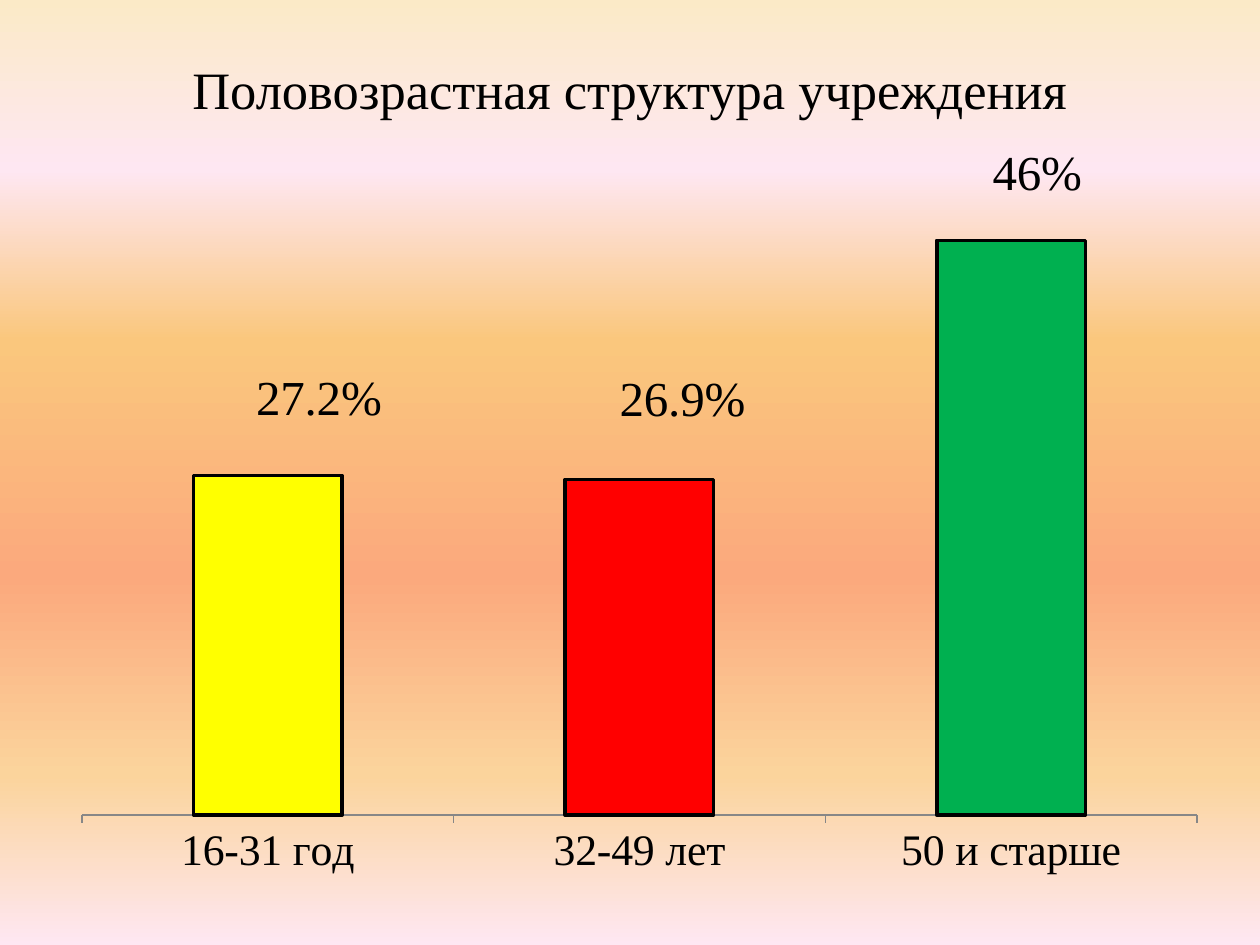
import pptx
import pptx.chart.data
import pptx.dml.color
import pptx.enum.chart
import pptx.enum.text
import pptx.oxml
import pptx.oxml.ns
import pptx.util

RGB = pptx.dml.color.RGBColor
PX = 914400 // 126
BLACK = RGB(0x00, 0x00, 0x00)
GREY = RGB(0x87, 0x87, 0x87)
YELLOW = RGB(0xFF, 0xFF, 0x00)
RED = RGB(0xFF, 0x00, 0x00)
GREEN = RGB(0x00, 0xB0, 0x50)
STOPS = [
    (0, RGB(0xFB, 0xEA, 0xC7)),
    (18, RGB(0xFE, 0xE7, 0xF2)),
    (36, RGB(0xFA, 0xC7, 0x7D)),
    (61, RGB(0xFB, 0xA9, 0x7D)),
    (82, RGB(0xFB, 0xD4, 0x9C)),
    (100, RGB(0xFE, 0xE7, 0xF2)),
]
FONT = "Times New Roman"
AGE_GROUPS = [
    ("16-31 год", 88, "27.2%", YELLOW, (51, -45)),
    ("32-49 лет", 87, "26.9%", RED, (43, -48)),
    ("50 и старше", 149, "46%", GREEN, (26, -35)),
]
NO_LEADERS = (
    '<c:extLst><c:ext uri="{CE6537A1-D6FC-4f65-9D91-7224C49458BB}"'
    ' xmlns:c15="http://schemas.microsoft.com/office/drawing/2012/chart">'
    '<c15:showLeaderLines val="0"/></c:ext></c:extLst>')


def set_attrs(obj, values):
    """Set each named attribute of obj."""
    for name, value in values.items():
        setattr(obj, name, value)


def set_font(font, size):
    """Apply the slide's typeface in black at the given point size."""
    set_attrs(font, {"name": FONT, "size": pptx.util.Pt(size), "bold": False})
    font.color.rgb = BLACK


def chart_xml(text):
    """Parse a chart element that uses the c prefix."""
    return pptx.oxml.parse_xml(text.replace(">", f" {pptx.oxml.ns.nsdecls('c')}>", 1))


def layout_xml(fractions, inner=False):
    """Return a manual layout element holding the given fractions."""
    modes = "".join(
        f'<c:{m} val="{v}"/>'
        for m, v in [("layoutTarget", "inner"), ("xMode", "edge"), ("yMode", "edge")]
        if inner
    )
    parts = "".join(f'<c:{k} val="{v:.4f}"/>' for k, v in fractions.items())
    return chart_xml(f"<c:layout><c:manualLayout>{modes}{parts}</c:manualLayout></c:layout>")


def paint_background(s):
    """Fill the slide with the vertical colour gradient."""
    fill = s.background.fill
    fill.gradient()
    fill.gradient_angle = 270
    gs_lst = s.element.find(".//" + pptx.oxml.ns.qn("a:gsLst"))
    for gs in list(gs_lst):
        gs_lst.remove(gs)
    for pos, color in STOPS:
        gs_lst.append(pptx.oxml.parse_xml(
            f'<a:gs {pptx.oxml.ns.nsdecls("a")} pos="{pos * 1000}">'
            f'<a:srgbClr val="{color}"/></a:gs>'))


def add_title(s, box):
    """Place the centred heading in the box."""
    tf = s.shapes.add_textbox(*(v * PX for v in box)).text_frame
    set_attrs(tf, {"word_wrap": True, "vertical_anchor": pptx.enum.text.MSO_ANCHOR.MIDDLE})
    p = tf.paragraphs[0]
    p.alignment = pptx.enum.text.PP_ALIGN.CENTER
    r = p.add_run()
    r.text = "Половозрастная структура учреждения"
    set_font(r.font, 30)


def style_axes(chart):
    """Show only the category axis and fix the value scale."""
    set_attrs(chart.value_axis, {
        "visible": False, "has_major_gridlines": False,
        "minimum_scale": 0, "maximum_scale": 160})
    axis = chart.category_axis
    axis.major_tick_mark = pptx.enum.chart.XL_TICK_MARK.OUTSIDE
    axis.format.line.color.rgb = GREY
    set_font(axis.tick_labels.font, 25)


def style_bar(fmt, color):
    """Fill a bar and give it the black outline."""
    fmt.fill.solid()
    fmt.fill.fore_color.rgb = color
    fmt.line.width = pptx.util.Pt(2)
    fmt.line.color.rgb = BLACK


def label_point(point, text):
    """Write the percentage above one bar."""
    label = point.data_label
    r = label.text_frame.paragraphs[0].add_run()
    r.text = text
    set_font(r.font, 28)
    label.position = pptx.enum.chart.XL_LABEL_POSITION.OUTSIDE_END


def style_series(series, width, height):
    """Colour the bars and place their labels without leader lines."""
    qn = pptx.oxml.ns.qn
    style_bar(series.format, AGE_GROUPS[0][3])
    for i, (_, _, text, color, _) in enumerate(AGE_GROUPS):
        if i:
            style_bar(series.points[i].format, color)
        label_point(series.points[i], text)
    labels = series.data_labels
    set_attrs(labels, {
        "show_value": True,
        "position": pptx.enum.chart.XL_LABEL_POSITION.OUTSIDE_END})
    set_font(labels.font, 28)
    d_lbls = labels._element
    for label, group in zip(d_lbls.findall(qn("c:dLbl")), AGE_GROUPS):
        dx, dy = group[4]
        label.insert(1, layout_xml({"x": dx / width, "y": dy / height}))
    for leader in d_lbls.findall(qn("c:showLeaderLines")):
        leader.set("val", "0")
    d_lbls.append(chart_xml(NO_LEADERS))


def add_age_chart(s, box):
    """Place the age group column chart in the box."""
    width, height = box[2:]
    data = pptx.chart.data.CategoryChartData()
    data.categories = [group[0] for group in AGE_GROUPS]
    data.add_series("Series 1", [group[1] for group in AGE_GROUPS])
    chart = s.shapes.add_chart(
        pptx.enum.chart.XL_CHART_TYPE.COLUMN_CLUSTERED,
        *(v * PX for v in box), data).chart
    set_attrs(chart, {"has_legend": False, "has_title": False})
    set_font(chart.font, 18)
    chart.font.name = "Calibri"
    style_axes(chart)
    plot = chart.plots[0]
    set_attrs(plot, {"gap_width": 150, "vary_by_categories": False})
    style_series(plot.series[0], width, height)
    qn = pptx.oxml.ns.qn
    area = chart.element.find(".//" + qn("c:plotArea"))
    for old in area.findall(qn("c:layout")):
        area.remove(old)
    area.insert(0, layout_xml({
        "x": 23 / width, "y": 48 / height,
        "w": 1115 / width, "h": 620 / height}, inner=True))


def main():
    """Build and save the slide."""
    prs = pptx.Presentation()
    set_attrs(prs, {"slide_width": 1260 * PX, "slide_height": 945 * PX})
    s = prs.slides.add_slide(prs.slide_layouts[6])
    paint_background(s)
    add_title(s, (63, 20, 1134, 137))
    add_age_chart(s, (59, 147, 1162, 738))
    prs.save("out.pptx")


if __name__ == "__main__":
    main()
